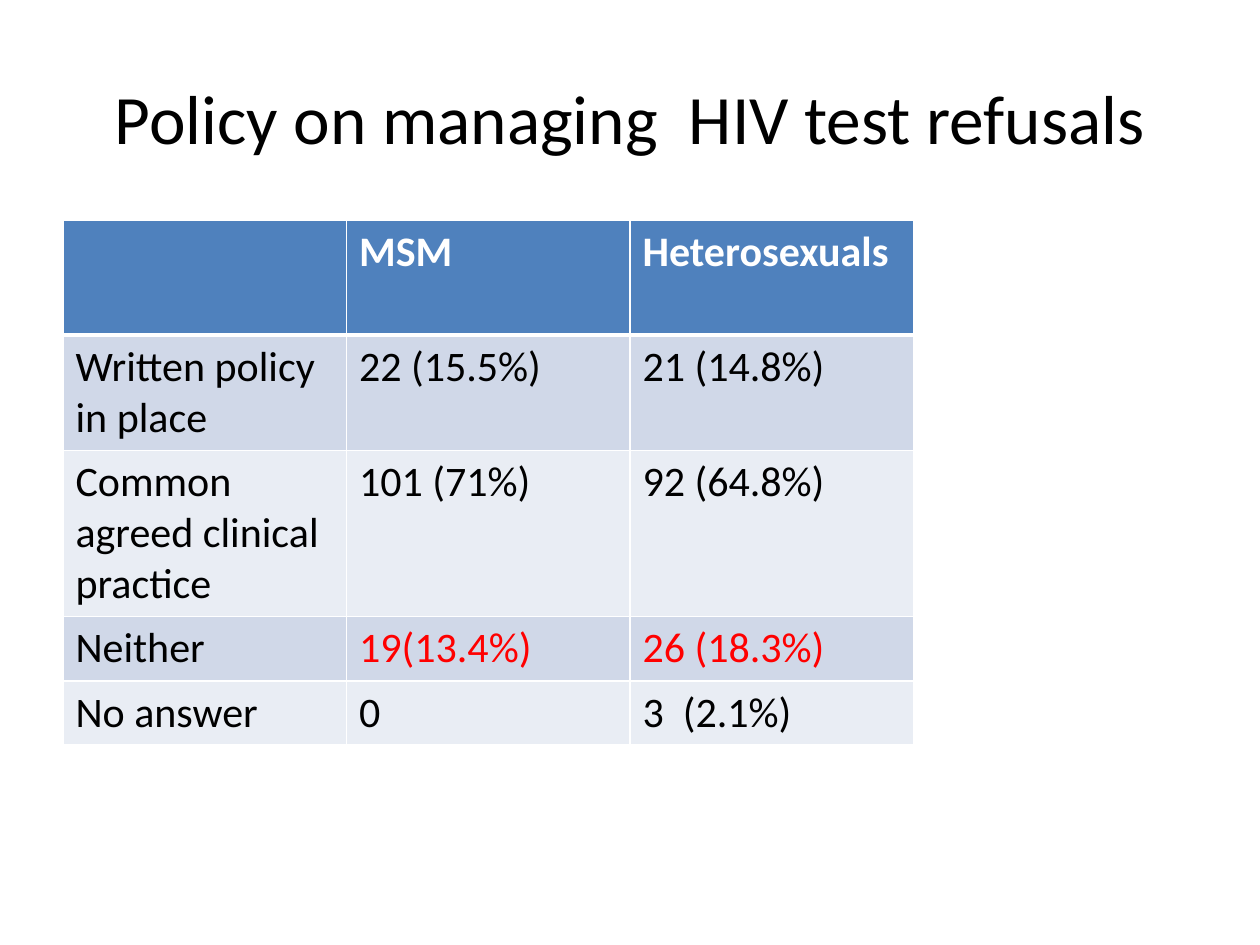
from lxml.etree import SubElement
from pptx import Presentation
from pptx.dml.color import RGBColor
from pptx.enum.text import MSO_ANCHOR, PP_ALIGN
from pptx.oxml.ns import qn
from pptx.util import Inches, Pt

COLORS = {
    "text": "000000",
    "header": "4F81BD",
    "header_text": "FFFFFF",
    "band_dark": "D0D8E8",
    "band_light": "E9EDF4",
    "border": "FFFFFF",
    "highlight": "FF0000",
}
POLICY_ROWS = [
    ("", "MSM", "Heterosexuals"),
    ("Written policy in place", "22 (15.5%)", "21 (14.8%)"),
    ("Common agreed clinical practice", "101 (71%)", "92 (64.8%)"),
    ("Neither", "19(13.4%)", "26 (18.3%)"),
    ("No answer", "0", "3  (2.1%)"),
]
ROW_HEIGHTS = [0.91, 0.91, 1.32, 0.51, 0.5]
COLUMN_WIDTH = 2.25
HIGHLIGHTED = {(3, 1), (3, 2)}


class SlideBuilder:
    """Holds the style and the slide being filled."""

    font_name = "Calibri"
    title_size = 39.6
    table_size = 24

    def __init__(self, slide):
        self.slide = slide

    def style(self, paragraph, size, color, bold=False):
        font = paragraph.font
        font.name, font.size, font.bold = self.font_name, Pt(size), bold
        font.color.rgb = RGBColor.from_string(COLORS[color])

    def title(self, wording, left, top, width, height):
        title = self.slide.shapes.title
        title.left, title.top = Inches(left), Inches(top)
        title.width, title.height = Inches(width), Inches(height)
        title.text_frame.text = wording
        title.text_frame.vertical_anchor = MSO_ANCHOR.MIDDLE
        heading = title.text_frame.paragraphs[0]
        heading.alignment = PP_ALIGN.CENTER
        self.style(heading, self.title_size, "text")

    def borders(self, cell, widths):
        """Draw the cell's edges; widths maps an edge tag to points."""
        properties = cell._tc.get_or_add_tcPr()
        for edge, width in widths.items():
            line = SubElement(properties, qn(f"a:{edge}"), w=str(Pt(width)))
            fill = SubElement(line, qn("a:solidFill"))
            SubElement(fill, qn("a:srgbClr"), val=COLORS["border"])

    def table(self, rows, left, top, column_width, row_heights, highlighted):
        table = self.slide.shapes.add_table(
            len(rows), len(rows[0]), Inches(left), Inches(top),
            Inches(column_width * len(rows[0])), Inches(sum(row_heights)),
        ).table
        for column in table.columns:
            column.width = Inches(column_width)
        for r, (entries, height) in enumerate(zip(rows, row_heights)):
            table.rows[r].height = Inches(height)
            is_header = r == 0
            band = "header" if is_header else "band_dark" if r % 2 else "band_light"
            for c, entry in enumerate(entries):
                cell = table.cell(r, c)
                cell.text = entry
                color = "header_text" if is_header else "text"
                if (r, c) in highlighted:
                    color = "highlight"
                self.style(cell.text_frame.paragraphs[0], self.table_size, color, is_header)
                self.borders(cell, {"lnL": 1, "lnR": 1,
                                    "lnT": 3 if r == 1 else 1,
                                    "lnB": 3 if is_header else 1})
                cell.fill.solid()
                cell.fill.fore_color.rgb = RGBColor.from_string(COLORS[band])


def main():
    presentation = Presentation()
    presentation.slide_width, presentation.slide_height = Inches(10), Inches(7.5)
    title_only = presentation.slide_layouts.get_by_name("Title Only")
    builder = SlideBuilder(presentation.slides.add_slide(title_only))
    builder.title("Policy on managing  HIV test refusals", 0.5, 0.3, 9, 1.25)
    builder.table(POLICY_ROWS, 0.5, 1.75, COLUMN_WIDTH, ROW_HEIGHTS, HIGHLIGHTED)
    presentation.save("out.pptx")


if __name__ == "__main__":
    main()
